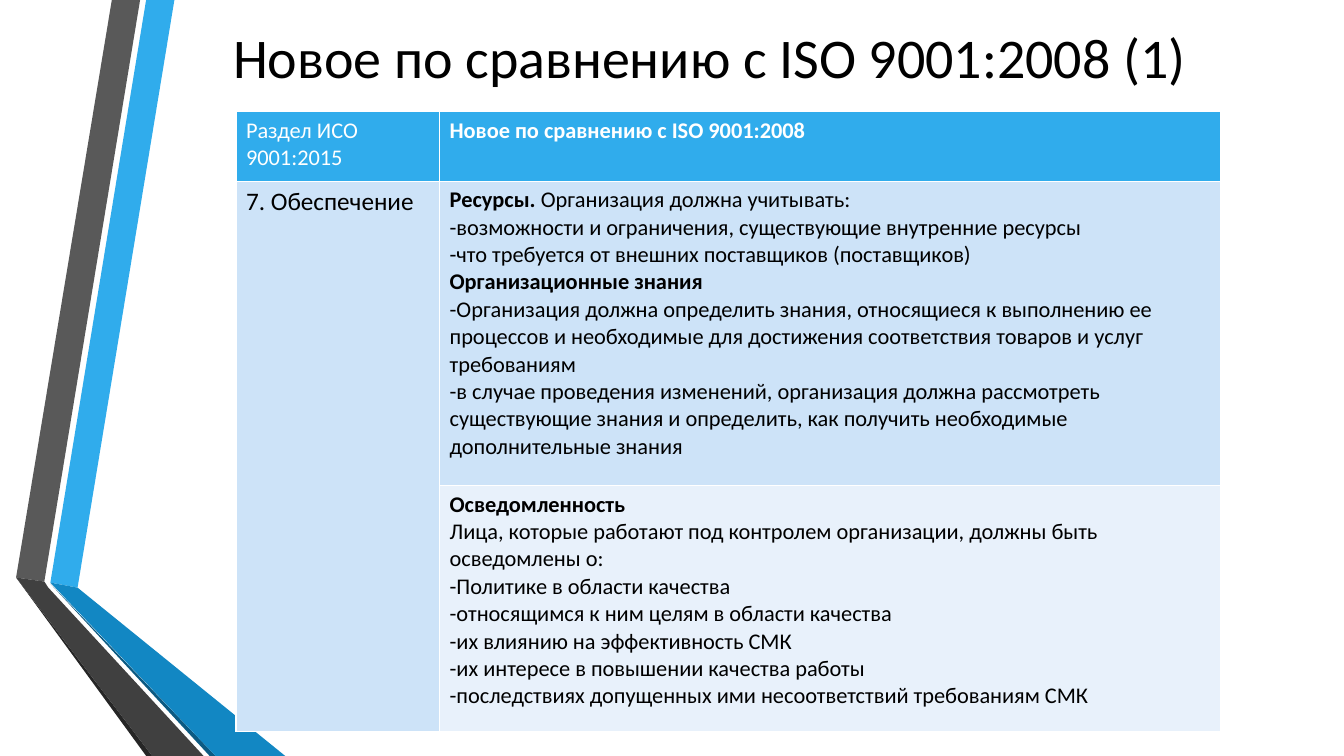
from dataclasses import dataclass

from lxml.etree import SubElement
from pptx import Presentation
from pptx.dml.color import RGBColor
from pptx.enum.text import MSO_ANCHOR, PP_ALIGN
from pptx.oxml.ns import qn
from pptx.util import Inches, Pt

FONT = "Calibri"
BLACK = RGBColor(0x00, 0x00, 0x00)
WHITE = RGBColor(0xFF, 0xFF, 0xFF)
SKY = RGBColor(0x30, 0xAC, 0xEC)
BLUE = RGBColor(0x12, 0x87, 0xC3)
NAVY = RGBColor(0x0C, 0x5A, 0x82)
GRAY = RGBColor(0x59, 0x59, 0x59)
DARK = RGBColor(0x40, 0x40, 0x40)
COAL = RGBColor(0x26, 0x26, 0x26)
PALE = RGBColor(0xCD, 0xE3, 0xF8)
LIGHT = RGBColor(0xE8, 0xF1, 0xFB)


@dataclass
class Band:
    color: RGBColor
    points: list[tuple[float, float]]


@dataclass
class Para:
    text: str
    bold: bool = False
    rest: str = ""  # regular text after a bold lead


@dataclass
class Entry:
    row: int
    col: int
    fill: RGBColor
    paras: list[Para]
    color: RGBColor = BLACK
    size: int = 16


BANDS = [
    Band(SKY, [(0.5, 5.78), (0.77, 5.83), (1.73, 0), (1.45, 0)]),
    Band(GRAY, [(1.39, 0), (1.11, 0), (0.16, 5.73), (0.44, 5.77)]),
    Band(COAL, [(0.16, 5.73), (1.45, 7.5), (1.51, 7.5)]),
    Band(NAVY, [(0.5, 5.79), (2.08, 7.5), (2.14, 7.5)]),
    Band(BLUE, [(0.5, 5.78), (2.14, 7.5), (2.83, 7.5), (0.77, 5.83)]),
    Band(DARK, [(2.02, 7.5), (0.48, 5.83), (0.44, 5.77), (0.16, 5.73), (1.51, 7.5)]),
]

COLS = [2.02, 7.75]
ROWS = [0.69, 3.02, 2.44]
ENTRIES = [
    Entry(0, 0, SKY, [Para("Раздел ИСО 9001:2015")], WHITE),
    Entry(0, 1, SKY, [Para("Новое по сравнению с ISO 9001:2008", True)], WHITE),
    Entry(1, 0, PALE, [Para("7. Обеспечение")], size=18),
    Entry(1, 1, PALE, [
        Para("Ресурсы. ", True, "Организация должна учитывать:"),
        Para("-возможности и ограничения, существующие внутренние ресурсы"),
        Para("-что требуется от внешних поставщиков (поставщиков)"),
        Para("Организационные знания", True),
        Para("-Организация должна определить знания, относящиеся к выполнению ее "
             "процессов и необходимые для достижения соответствия товаров и услуг "
             "требованиям"),
        Para("-в случае проведения изменений, организация должна рассмотреть "
             "существующие знания и определить, как получить необходимые "
             "дополнительные знания"),
    ]),
    Entry(2, 1, LIGHT, [
        Para("Осведомленность", True),
        Para("Лица, которые работают под контролем организации, должны быть "
             "осведомлены о:"),
        Para("-Политике в области качества"),
        Para("-относящимся к ним целям в области качества"),
        Para("-их влиянию на эффективность СМК"),
        Para("-их интересе в повышении качества работы"),
        Para("-последствиях допущенных ими несоответствий требованиям СМК"),
    ]),
]


def style(run, size: int, color: RGBColor, bold: bool = False) -> None:
    run.font.name = FONT
    run.font.size = Pt(size)
    run.font.color.rgb = color
    run.font.bold = bold


def draw_band(slide, band: Band) -> None:
    points = [(Inches(x), Inches(y)) for x, y in band.points]
    pen = slide.shapes.build_freeform(*points[0])
    pen.add_line_segments(points[1:], close=True)
    shape = pen.convert_to_shape()
    shape.shadow.inherit = False
    shape.fill.solid()
    shape.fill.fore_color.rgb = band.color
    shape.line.fill.background()


def draw_title(slide, text: str) -> None:
    box = slide.shapes.add_textbox(Inches(1.62), Inches(0), Inches(10.96), Inches(1.11))
    frame = box.text_frame
    frame.word_wrap = True
    frame.vertical_anchor = MSO_ANCHOR.MIDDLE
    frame.text = text
    para = frame.paragraphs[0]
    para.alignment = PP_ALIGN.CENTER
    style(para.runs[0], 40, BLACK)


def draw_edges(cell) -> None:
    props = cell._tc.get_or_add_tcPr()
    for side in ("a:lnL", "a:lnR", "a:lnT", "a:lnB"):
        line = SubElement(props, qn(side), w=str(Pt(1)))
        fill = SubElement(line, qn("a:solidFill"))
        SubElement(fill, qn("a:srgbClr"), val=str(WHITE))


def fill_cell(cell, entry: Entry) -> None:
    cell.fill.solid()
    cell.fill.fore_color.rgb = entry.fill
    frame = cell.text_frame
    frame.text = "\n".join(item.text for item in entry.paras)
    for para, item in zip(frame.paragraphs, entry.paras):
        style(para.runs[0], entry.size, entry.color, item.bold)
        if item.rest:
            run = para.add_run()
            run.text = item.rest
            style(run, entry.size, entry.color)


def draw_table(slide) -> None:
    frame = slide.shapes.add_table(
        len(ROWS), len(COLS), Inches(2.34), Inches(1.11),
        Inches(sum(COLS)), Inches(sum(ROWS)))
    table = frame.table
    for col, width in zip(table.columns, COLS):
        col.width = Inches(width)
    for row, height in zip(table.rows, ROWS):
        row.height = Inches(height)
    for cell in table.iter_cells():
        draw_edges(cell)
    # The section name spans both body rows
    table.cell(1, 0).merge(table.cell(2, 0))
    for entry in ENTRIES:
        fill_cell(table.cell(entry.row, entry.col), entry)


def main() -> None:
    deck = Presentation()
    deck.slide_width = Inches(13.33)
    deck.slide_height = Inches(7.5)
    slide = deck.slides.add_slide(deck.slide_layouts[6])

    # Folded ribbons on the left
    for band in BANDS:
        draw_band(slide, band)

    # Title and table
    draw_title(slide, "Новое по сравнению с ISO 9001:2008 (1) ")
    draw_table(slide)
    deck.save("out.pptx")


if __name__ == "__main__":
    main()
